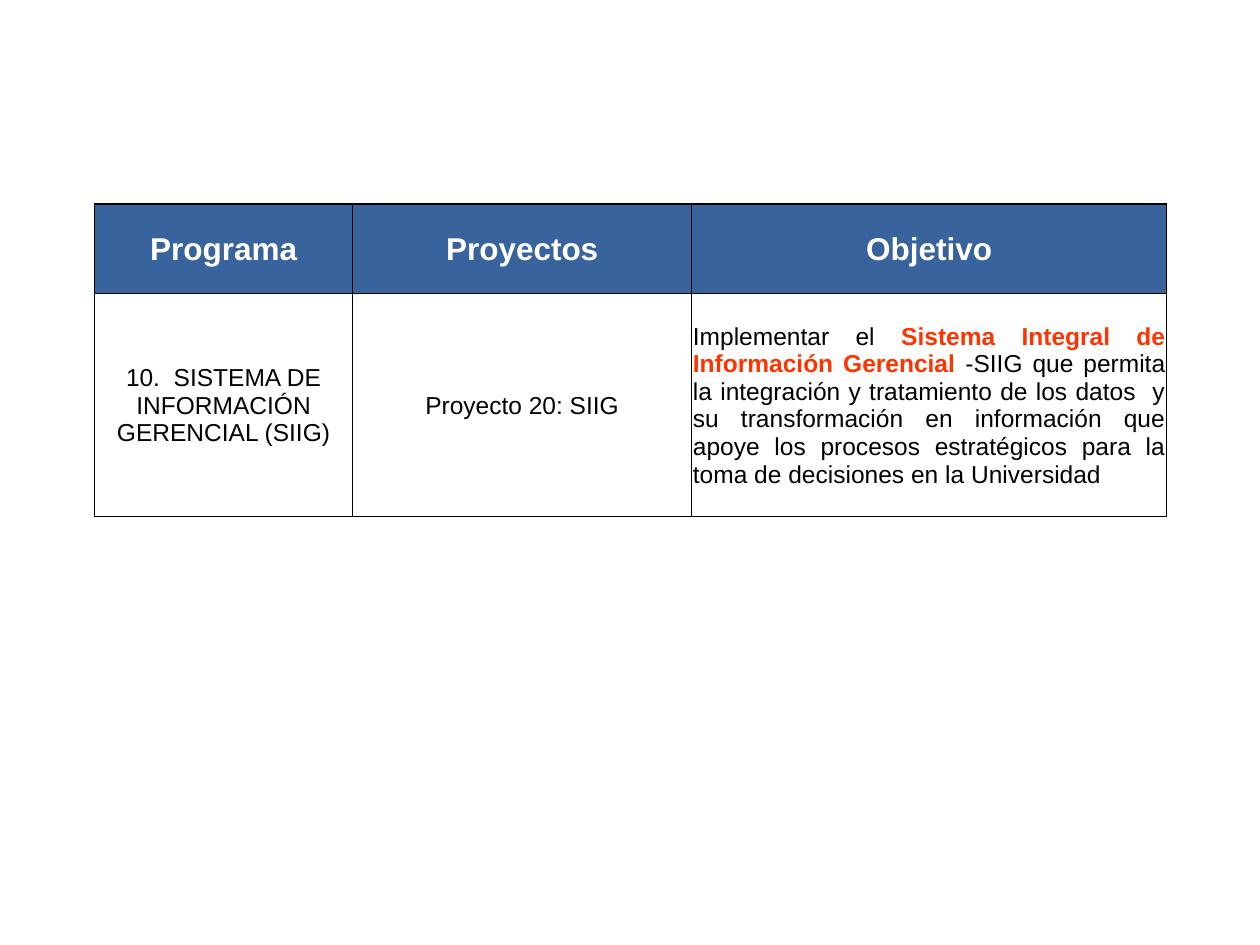
from dataclasses import dataclass

from lxml import etree
from pptx import Presentation
from pptx.dml.color import RGBColor
from pptx.enum.text import MSO_ANCHOR, PP_ALIGN
from pptx.oxml.ns import qn
from pptx.util import Inches, Pt

CENTER, JUSTIFY = PP_ALIGN.CENTER, PP_ALIGN.JUSTIFY
MIDDLE = MSO_ANCHOR.MIDDLE

BLACK = RGBColor(0x00, 0x00, 0x00)
WHITE = RGBColor(0xFF, 0xFF, 0xFF)
BLUE = RGBColor(0x38, 0x63, 0x9C)
ORANGE = RGBColor(0xFF, 0x33, 0x00)

BLANK_LAYOUT = 6
COLUMN_WIDTHS = (2.05, 2.69, 3.77)
ROW_HEIGHTS = (0.71, 1.77)


@dataclass(frozen=True)
class TextRun:
    text: str
    highlighted: bool = False


@dataclass(frozen=True)
class CellStyle:
    fill: RGBColor
    color: RGBColor
    size: int
    bold: bool


@dataclass(frozen=True)
class CellContent:
    runs: tuple[TextRun, ...]
    alignment: PP_ALIGN = CENTER


HEADER_STYLE = CellStyle(BLUE, WHITE, 18, True)
BODY_STYLE = CellStyle(WHITE, BLACK, 14, False)

HEADERS = tuple(
    CellContent((TextRun(title),)) for title in ("Programa", "Proyectos", "Objetivo")
)
BODY = (
    CellContent((TextRun("10.  SISTEMA DE INFORMACIÓN GERENCIAL (SIIG)"),)),
    CellContent((TextRun("Proyecto 20: SIIG"),)),
    CellContent(
        (
            TextRun("Implementar el "),
            TextRun("Sistema Integral de Información Gerencial ", highlighted=True),
            TextRun(
                "-SIIG que permita la integración y tratamiento de los datos  y su "
                "transformación en información que apoye los procesos estratégicos "
                "para la toma de decisiones en la Universidad"
            ),
        ),
        JUSTIFY,
    ),
)
ROWS = ((HEADER_STYLE, HEADERS), (BODY_STYLE, BODY))


def add_borders(cell, color: RGBColor, width: float) -> None:
    properties = cell._tc.get_or_add_tcPr()
    for position, side in enumerate(("a:lnL", "a:lnR", "a:lnT", "a:lnB")):
        line = etree.Element(qn(side), w=str(Pt(width)))
        fill = etree.SubElement(line, qn("a:solidFill"))
        etree.SubElement(fill, qn("a:srgbClr"), val=str(color))
        # Border lines must come before the cell's fill.
        properties.insert(position, line)


def write_cell(cell, content: CellContent, style: CellStyle) -> None:
    cell.fill.solid()
    cell.fill.fore_color.rgb = style.fill
    cell.vertical_anchor = MIDDLE
    cell.margin_left = cell.margin_right = cell.margin_top = Inches(0.01)
    cell.margin_bottom = 0
    add_borders(cell, BLACK, 1)

    paragraph = cell.text_frame.paragraphs[0]
    paragraph.alignment = content.alignment
    for text_run in content.runs:
        run = paragraph.add_run()
        run.text = text_run.text
        run.font.name = "Arial"
        run.font.size = Pt(style.size)
        run.font.bold = style.bold or text_run.highlighted
        run.font.color.rgb = ORANGE if text_run.highlighted else style.color


def add_program_table(slide) -> None:
    table = slide.shapes.add_table(
        len(ROW_HEIGHTS),
        len(COLUMN_WIDTHS),
        Inches(0.75),
        Inches(1.62),
        Inches(sum(COLUMN_WIDTHS)),
        Inches(sum(ROW_HEIGHTS)),
    ).table
    table.horz_banding = False
    for column, width in zip(table.columns, COLUMN_WIDTHS):
        column.width = Inches(width)
    for row, height, (style, contents) in zip(table.rows, ROW_HEIGHTS, ROWS):
        row.height = Inches(height)
        for cell, content in zip(row.cells, contents):
            write_cell(cell, content, style)


def main() -> None:
    presentation = Presentation()
    presentation.slide_width = Inches(10)
    presentation.slide_height = Inches(7.5)
    slide = presentation.slides.add_slide(presentation.slide_layouts[BLANK_LAYOUT])
    add_program_table(slide)
    presentation.save("out.pptx")


if __name__ == "__main__":
    main()
